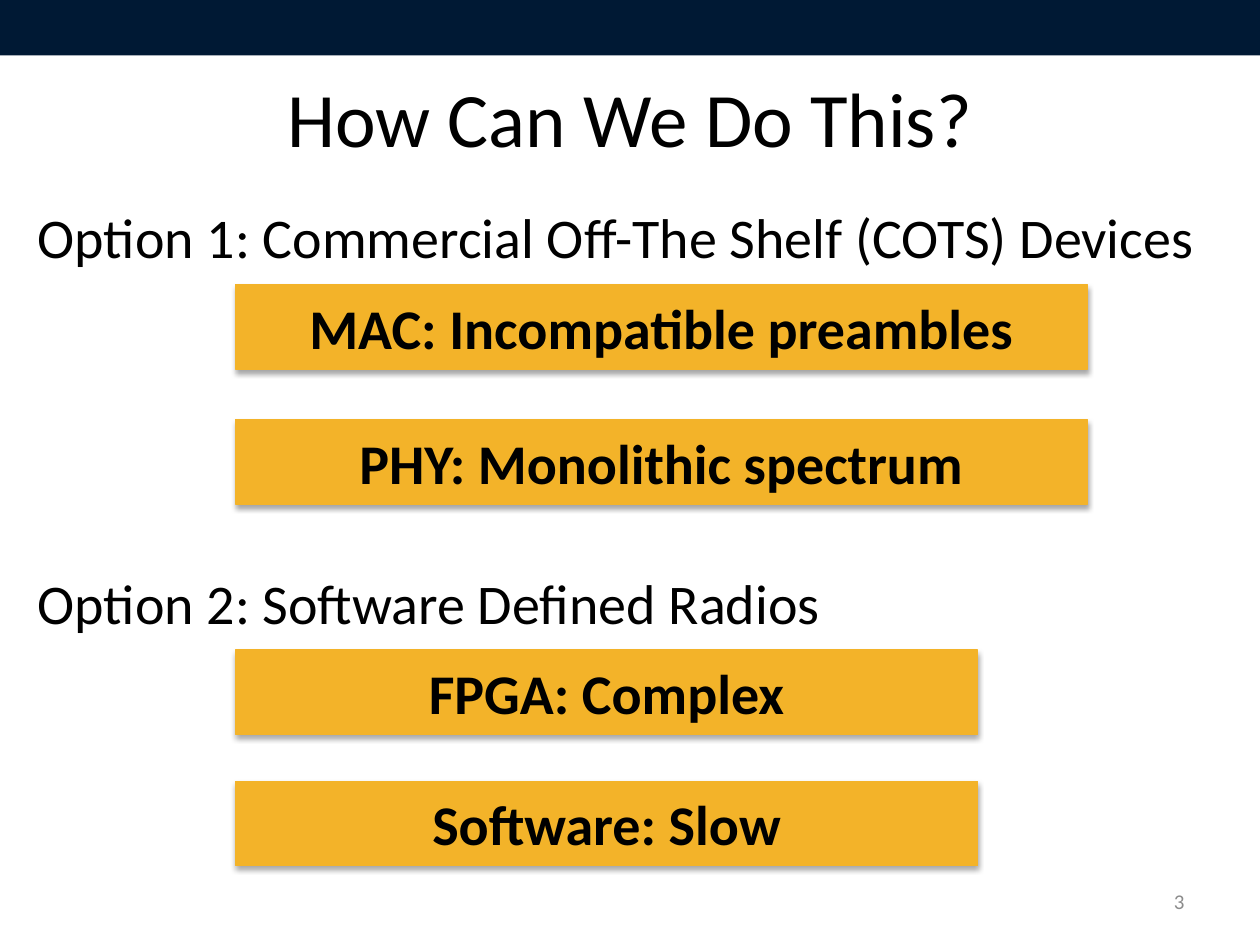
from lxml import etree
from pptx import Presentation
from pptx.dml.color import RGBColor
from pptx.enum.shapes import MSO_SHAPE
from pptx.enum.text import MSO_ANCHOR, PP_ALIGN
from pptx.oxml.ns import qn
from pptx.util import Inches, Pt

RECTANGLE = MSO_SHAPE.RECTANGLE
TOP, MIDDLE = MSO_ANCHOR.TOP, MSO_ANCHOR.MIDDLE
LEFT, CENTER, RIGHT = PP_ALIGN.LEFT, PP_ALIGN.CENTER, PP_ALIGN.RIGHT

COLORS = {
    "band": "001934",
    "text": "000000",
    "number": "8C8C8C",
    "bar": "F3B329",
    "shadow": "000000",
}
FONT = "Calibri"
WIDTH, HEIGHT = 10, 7.5
HEADING_LEFT, BAR_LEFT = 0.2, 1.87
HEADING_HEIGHT, BAR_HEIGHT = 0.64, 0.67
HEADING_TO_BAR = 0.7

# heading, heading width, top, bar width, distance between bar tops, bar labels
OPTIONS = [
    ("Option 1: Commercial Off-The Shelf (COTS) Devices", 9.65, 1.56, 6.76, 1.07,
     ["MAC: Incompatible preambles", "PHY: Monolithic spectrum"]),
    ("Option 2: Software Defined Radios", 6.64, 4.46, 5.89, 1.04,
     ["FPGA: Complex", "Software: Slow"]),
]


def rgb(name):
    return RGBColor.from_string(COLORS[name])


def write(shape, text, size, align, anchor=MIDDLE, color="text", bold=False, wrap=True):
    frame = shape.text_frame
    frame.word_wrap = wrap
    frame.vertical_anchor = anchor
    para = frame.paragraphs[0]
    para.text = text
    para.alignment = align
    para.font.name = FONT
    para.font.size = Pt(size)
    para.font.bold = bold
    para.font.color.rgb = rgb(color)


def add_text(page, bounds, text, size, align, **style):
    box = page.shapes.add_textbox(*map(Inches, bounds))
    write(box, text, size, align, **style)


def add_rectangle(page, bounds, color):
    shape = page.shapes.add_shape(RECTANGLE, *map(Inches, bounds))
    shape.fill.solid()
    shape.fill.fore_color.rgb = rgb(color)
    shape.line.fill.background()
    shape.shadow.inherit = False
    return shape


def add_drop_shadow(shape):
    """Fill the empty effect list with a soft shadow falling straight down."""
    effects = shape._element.spPr.find(qn("a:effectLst"))
    shadow = etree.SubElement(effects, qn("a:outerShdw"), blurRad=str(Pt(3.1)),
                              dist=str(Pt(1.8)), dir="5400000", rotWithShape="0")
    color = etree.SubElement(shadow, qn("a:srgbClr"), val=COLORS["shadow"])
    etree.SubElement(color, qn("a:alpha"), val="35000")


def add_bar(page, top, width, label):
    bar = add_rectangle(page, (BAR_LEFT, top, width, BAR_HEIGHT), "bar")
    bar.line.color.rgb = rgb("bar")
    bar.line.width = Pt(0.75)
    add_drop_shadow(bar)
    write(bar, label, 32, CENTER, bold=True)


def add_option(page, heading, heading_width, top, bar_width, pitch, labels):
    add_text(page, (HEADING_LEFT, top, heading_width, HEADING_HEIGHT), heading, 32, LEFT,
             anchor=TOP, wrap=False)
    for row, label in enumerate(labels):
        add_bar(page, top + HEADING_TO_BAR + row * pitch, bar_width, label)


def main():
    deck = Presentation()
    deck.slide_width, deck.slide_height = Inches(WIDTH), Inches(HEIGHT)
    page = deck.slides.add_slide(deck.slide_layouts[6])

    add_rectangle(page, (0, 0, WIDTH, 0.44), "band")
    add_text(page, (0.5, 0.3, WIDTH - 1, 1.25), "How Can We Do This?", 44, CENTER)
    add_text(page, (7.17, 6.95, 2.33, 0.4), "3", 12, RIGHT, color="number")
    for option in OPTIONS:
        add_option(page, *option)

    deck.save("out.pptx")


if __name__ == "__main__":
    main()
